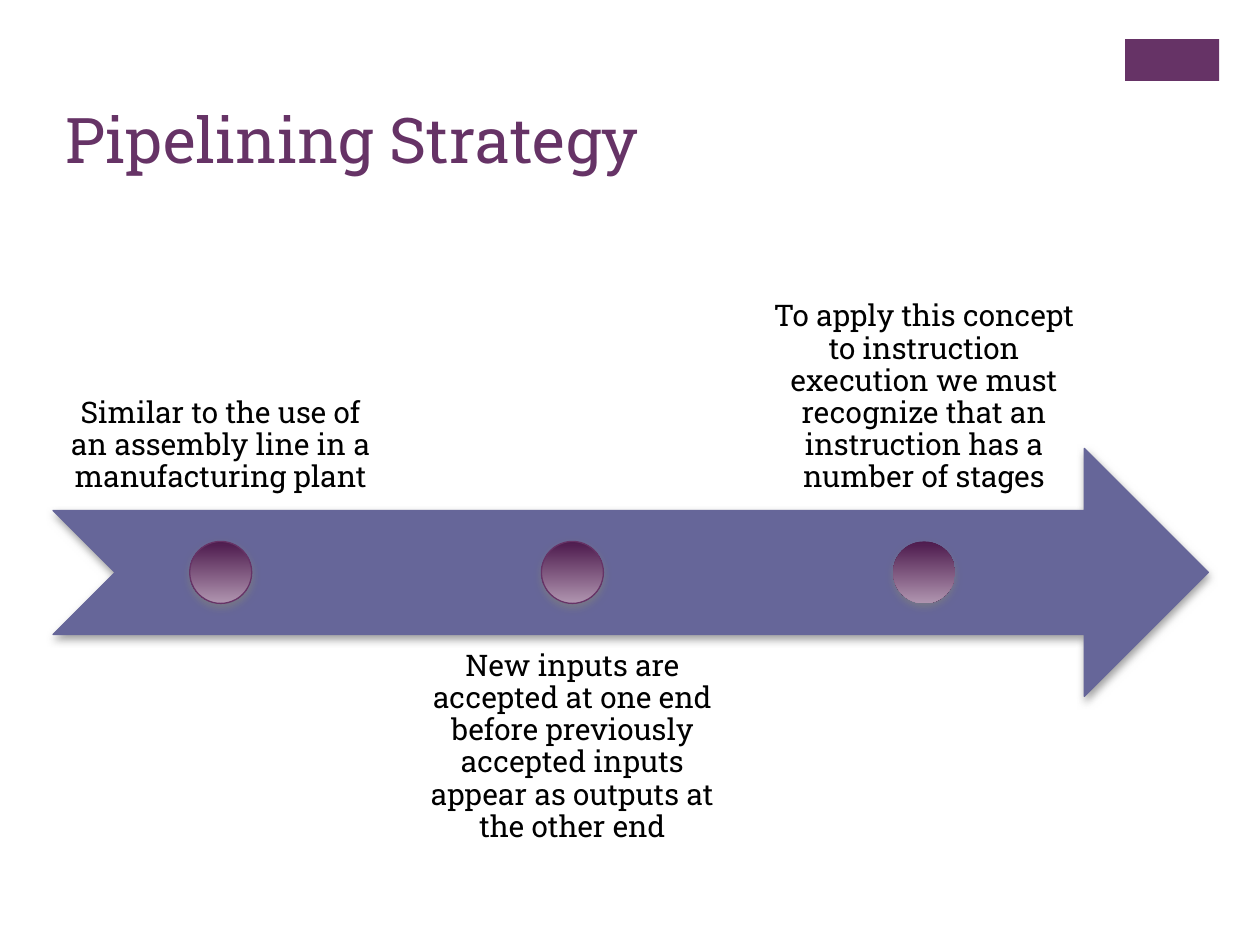
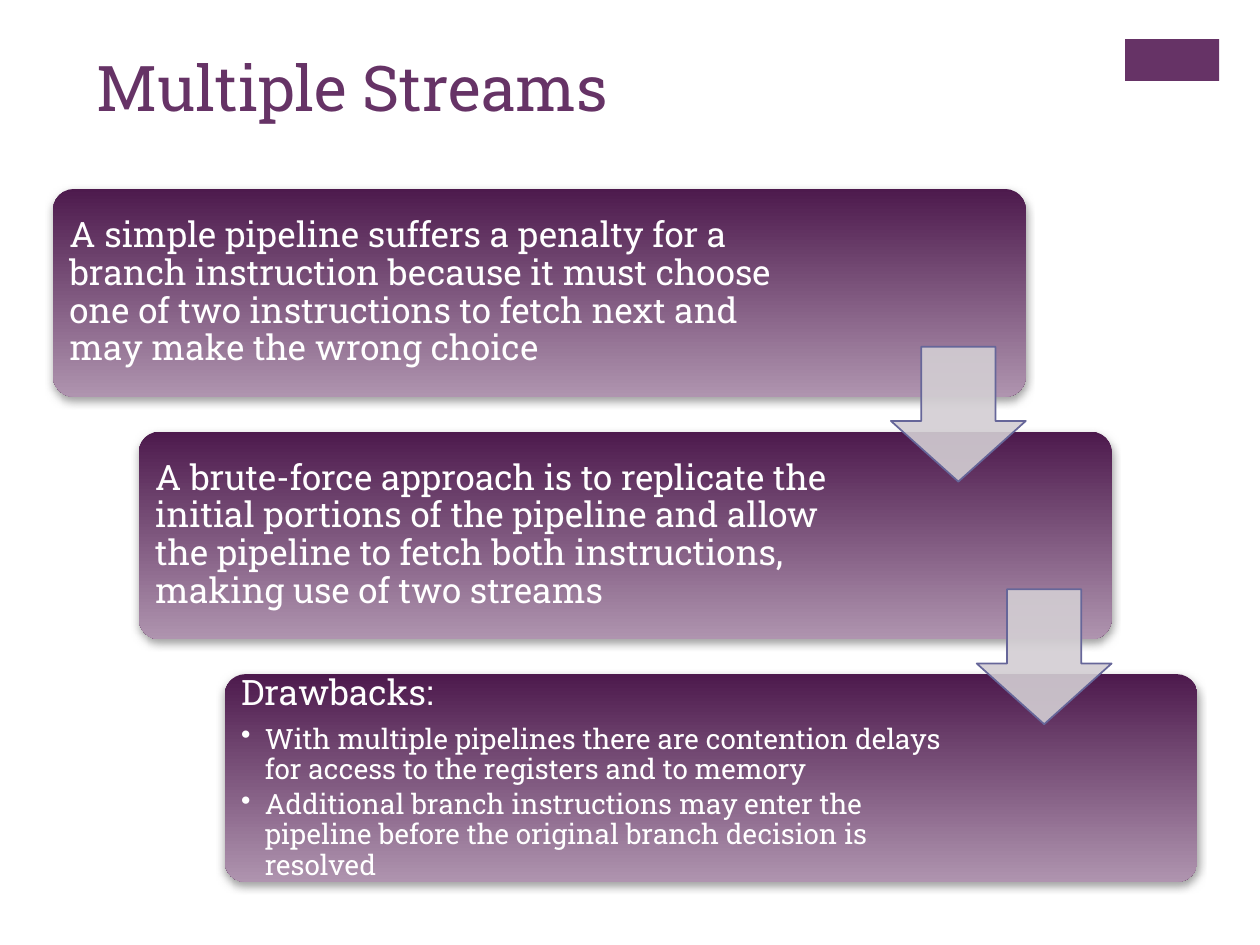
from dataclasses import dataclass

import lxml.etree
import pptx
import pptx.dml.color
import pptx.enum.shapes
import pptx.enum.text
import pptx.oxml.ns
import pptx.util

Cm = pptx.util.Cm
Pt = pptx.util.Pt
Shape = pptx.enum.shapes.MSO_SHAPE
Align = pptx.enum.text.PP_ALIGN
Anchor = pptx.enum.text.MSO_ANCHOR
qn = pptx.oxml.ns.qn


@dataclass(frozen=True)
class Theme:
    font: str = "Roboto Slab"
    purple: str = "663366"
    slate: str = "666699"
    gradient: tuple = ("4D1A4D", "AF94AF")
    pale: str = "D3CED3"
    shadow: str = "808080"
    black: str = "000000"
    white: str = "FFFFFF"
    title_size: int = 36
    step_size: int = 17
    panel_size: int = 20
    bullet_size: int = 16


THEME = Theme()

STRATEGY_TITLE = "Pipelining Strategy"
STRATEGY_STEPS = [
    "Similar to the use of an assembly line in a manufacturing plant",
    "New inputs are accepted at one end before previously accepted inputs "
    "appear as outputs at the other end",
    "To apply this concept to instruction execution we must recognize that "
    "an instruction has a number of stages",
]

STREAMS_TITLE = "Multiple Streams"
STREAMS_PANELS = [
    ("A simple pipeline suffers a penalty for a branch instruction because it "
     "must choose one of two instructions to fetch next and may make the "
     "wrong choice", []),
    ("A brute-force approach is to replicate the initial portions of the "
     "pipeline and allow the pipeline to fetch both instructions, making use "
     "of two streams", []),
    ("Drawbacks:", [
        "With multiple pipelines there are contention delays for access to "
        "the registers and to memory",
        "Additional branch instructions may enter the pipeline before the "
        "original branch decision is resolved",
    ]),
]


def color(value):
    return pptx.dml.color.RGBColor.from_string(value)


def add_shape(page, kind, left, top, width, height, fill, line=None,
              line_width=0.75, shadow=False):
    shape = page.shapes.add_shape(kind, Cm(left), Cm(top), Cm(width), Cm(height))
    shape.shadow.inherit = False
    if isinstance(fill, tuple):
        shape.fill.gradient()
        shape.fill.gradient_angle = 270
        for stop, value in zip(shape.fill.gradient_stops, fill):
            stop.color.rgb = color(value)
    else:
        shape.fill.solid()
        shape.fill.fore_color.rgb = color(fill)
    if line:
        shape.line.color.rgb = color(line)
        shape.line.width = Pt(line_width)
    else:
        shape.line.fill.background()
    if shadow:
        add_shadow(shape)
    return shape


def add_alpha(element, percent):
    lxml.etree.SubElement(element, qn("a:alpha"), val=str(percent * 1000))


def add_shadow(shape):
    effects = shape._element.spPr.find(qn("a:effectLst"))
    outer = lxml.etree.SubElement(
        effects, qn("a:outerShdw"), blurRad=str(Pt(5)), dist=str(Pt(2)),
        dir="5400000", rotWithShape="0")
    add_alpha(lxml.etree.SubElement(outer, qn("a:srgbClr"), val=THEME.shadow), 75)


def add_box(page, left, top, width, height, inset, anchor=Anchor.TOP):
    box = page.shapes.add_textbox(Cm(left), Cm(top), Cm(width), Cm(height))
    frame = box.text_frame
    frame.word_wrap = True
    frame.vertical_anchor = anchor
    frame.margin_left = frame.margin_right = Cm(inset[0])
    frame.margin_top = frame.margin_bottom = Cm(inset[1])
    return frame


def write(para, text, size, ink, spacing=None, align=None):
    para.text = text
    para.line_spacing = spacing
    para.alignment = align
    para.font.name = THEME.font
    para.font.size = Pt(size)
    para.font.color.rgb = color(ink)


def add_bullet(para):
    properties = para._p.get_or_add_pPr()
    properties.set("marL", str(Cm(0.48)))
    properties.set("indent", str(Cm(-0.48)))
    lxml.etree.SubElement(properties, qn("a:buChar"), char="•")


def add_page(deck, title, left, top):
    page = deck.slides.add_slide(deck.slide_layouts[6])
    add_shape(page, Shape.RECTANGLE, 22.68, 0.79, 1.9, 0.84, THEME.purple)
    frame = add_box(page, left, top, 20.98, 3.1, (0.25, 0.13))
    write(frame.paragraphs[0], title, THEME.title_size, THEME.purple)
    return page


def build_strategy(deck):
    page = add_page(deck, STRATEGY_TITLE, 1.07, 1.9)
    left, top, height = 1.07, 9.04, 5
    label_width, pitch, dot = 6.76, 7.09, 1.25
    add_shape(page, Shape.NOTCHED_RIGHT_ARROW, left, top, 23.29, height,
              THEME.slate, THEME.slate, shadow=True)
    for index, text in enumerate(STRATEGY_STEPS):
        above = index % 2 == 0
        label_left = left + index * pitch
        label_top = top + (-0.75 if above else 0.75) * height
        frame = add_box(page, label_left, label_top, label_width, height,
                        (0.33, 0.33), Anchor.BOTTOM if above else Anchor.TOP)
        write(frame.paragraphs[0], text, THEME.step_size, THEME.black, 0.9,
              Align.CENTER)
        last = index == len(STRATEGY_STEPS) - 1
        add_shape(page, Shape.OVAL, label_left + (label_width - dot) / 2,
                  top + (height - dot) / 2, dot, dot, THEME.gradient,
                  None if last else THEME.purple, shadow=True)


def build_streams(deck):
    page = add_page(deck, STREAMS_TITLE, 1.7, 0.84)
    width, height, arrow_size, edge = 19.61, 4.19, 2.72, 0.12
    corners = [(1.07 + index * 1.73, 3.81 + index * 4.89)
               for index in range(len(STREAMS_PANELS))]
    for (left, top), (lead, bullets) in zip(corners, STREAMS_PANELS):
        panel = add_shape(page, Shape.ROUNDED_RECTANGLE, left, top, width, height,
                          THEME.gradient, shadow=True)
        panel.adjustments[0] = 0.1
        frame = add_box(page, left + edge, top + edge, 14.9, height - 2 * edge,
                        (0.21, 0.21), Anchor.MIDDLE)
        write(frame.paragraphs[0], lead, THEME.panel_size, THEME.white, 0.9)
        for index, text in enumerate(bullets):
            para = frame.add_paragraph()
            para.level = 1
            add_bullet(para)
            write(para, text, THEME.bullet_size, THEME.white, 0.9)
            para.space_before = Pt(3 if index else 7)
    for (left, top), (_, next_top) in zip(corners, corners[1:]):
        gap_middle = (top + height + next_top) / 2
        arrow = add_shape(page, Shape.DOWN_ARROW, left + width - arrow_size,
                          gap_middle - arrow_size / 2, arrow_size, arrow_size,
                          THEME.pale, THEME.slate, 1)
        arrow.adjustments[0] = 0.55
        arrow.adjustments[1] = 0.45
        fill = arrow._element.spPr.find(qn("a:solidFill"))
        add_alpha(fill.find(qn("a:srgbClr")), 90)


def main():
    deck = pptx.Presentation()
    deck.slide_width = Cm(25.4)
    deck.slide_height = Cm(19.05)
    build_strategy(deck)
    build_streams(deck)
    deck.save("out.pptx")


if __name__ == "__main__":
    main()
